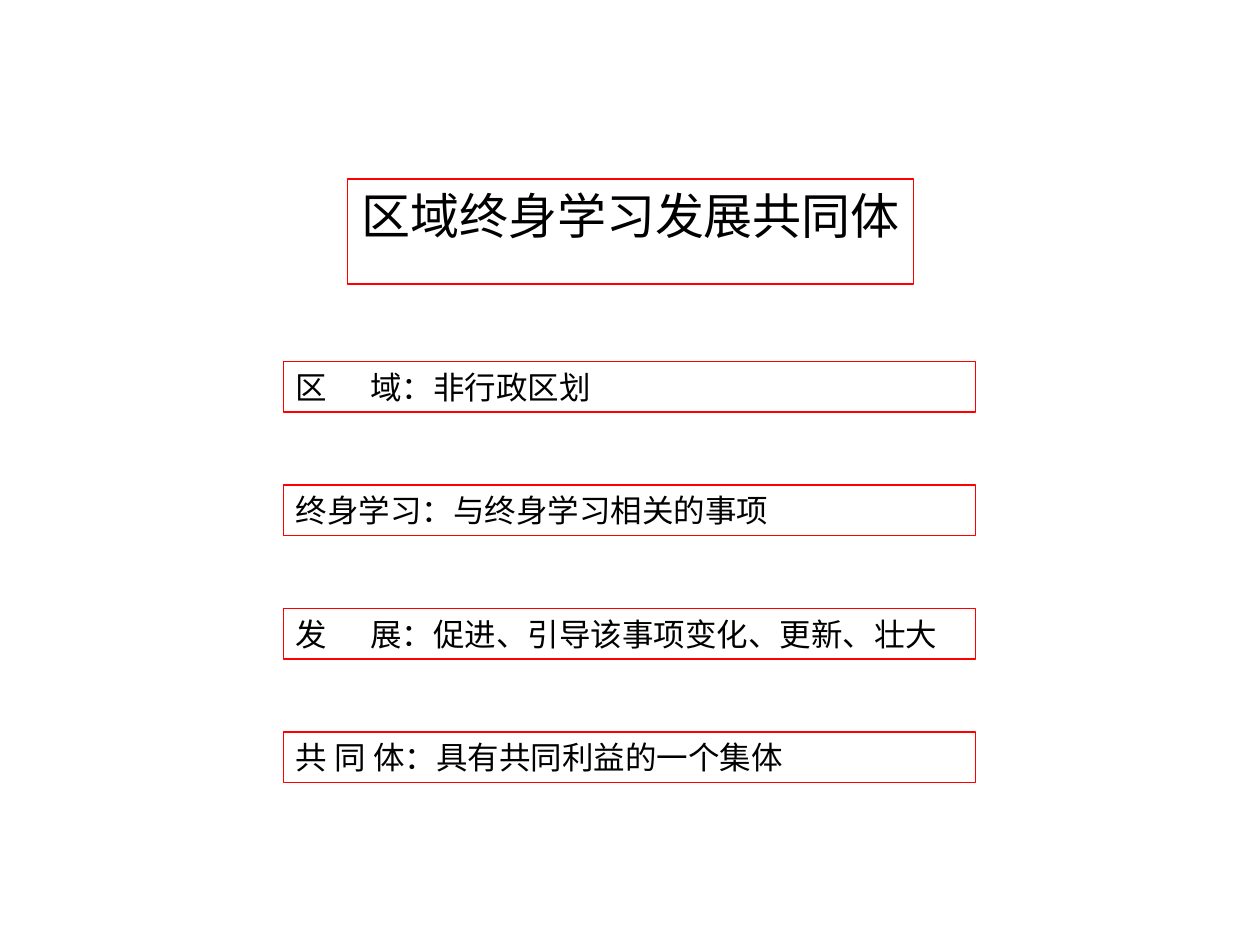
from lxml import etree
from pptx import Presentation
from pptx.dml.color import RGBColor
from pptx.enum.text import MSO_ANCHOR, MSO_AUTO_SIZE, PP_ALIGN
from pptx.oxml.ns import qn
from pptx.util import Inches, Pt

LEFT, CENTER = PP_ALIGN.LEFT, PP_ALIGN.CENTER
TOP = MSO_ANCHOR.TOP
GROW = MSO_AUTO_SIZE.SHAPE_TO_FIT_TEXT
TITLE_ONLY = 5
FONT = "Noto Sans CJK SC"
BLACK, RED = "000000", "FF0000"
TERM_LEFT, TERM_TOP, TERM_WIDTH, TERM_HEIGHT = 2.25, 2.87, 5.49, 0.4
TERM_STEP = 0.98
SECOND_CHARACTER = 0.59
TITLE = "区域终身学习发展共同体"
TERMS = [
    "区\t域：非行政区划",
    "终身学习：与终身学习相关的事项",
    "发\t展：促进、引导该事项变化、更新、壮大",
    "共 同 体：具有共同利益的一个集体",
]


def color(value):
    """Return the colour for a hex string."""
    return RGBColor.from_string(value)


def write_text(shape, text, size=18, align=LEFT, wrap=True, fill=BLACK):
    """Write one formatted paragraph into a shape that grows with its text."""
    frame = shape.text_frame
    frame.word_wrap = wrap
    frame.auto_size = GROW
    frame.vertical_anchor = TOP
    paragraph = frame.paragraphs[0]
    paragraph.alignment = align
    run = paragraph.add_run()
    run.text = text
    run.font.size = Pt(size)
    run.font.name = FONT
    run.font.color.rgb = color(fill)
    east_asian = etree.SubElement(run.font._element, qn("a:ea"))
    east_asian.set("typeface", FONT)
    return paragraph


def add_tab_stop(paragraph, position):
    """Set a left tab stop on a paragraph."""
    properties = paragraph._p.get_or_add_pPr()
    tabs = etree.SubElement(properties, qn("a:tabLst"))
    etree.SubElement(tabs, qn("a:tab"), pos=str(Inches(position)), algn="l")


def outline(shape):
    """Give a shape a thin red border and no fill."""
    shape.fill.background()
    shape.line.color.rgb = color(RED)
    shape.line.width = Pt(0.75)


def add_title(slide):
    """Place the framed slide title."""
    title = slide.shapes.title
    title.left, title.top = Inches(2.76), Inches(1.42)
    title.width, title.height = Inches(4.49), Inches(0.57)
    outline(title)
    write_text(title, TITLE, size=28, align=CENTER, wrap=False)


def add_term(slide, index, text):
    """Add one framed definition at its place in the column."""
    box = slide.shapes.add_textbox(
        Inches(TERM_LEFT),
        Inches(TERM_TOP + index * TERM_STEP),
        Inches(TERM_WIDTH),
        Inches(TERM_HEIGHT),
    )
    outline(box)
    paragraph = write_text(box, text)
    if "\t" in text:
        add_tab_stop(paragraph, SECOND_CHARACTER)


def main():
    """Build and save the slide."""
    presentation = Presentation()
    presentation.slide_width = Inches(10)
    presentation.slide_height = Inches(7.5)
    slide = presentation.slides.add_slide(presentation.slide_layouts[TITLE_ONLY])
    add_title(slide)
    for index, text in enumerate(TERMS):
        add_term(slide, index, text)
    presentation.save("out.pptx")


if __name__ == "__main__":
    main()
